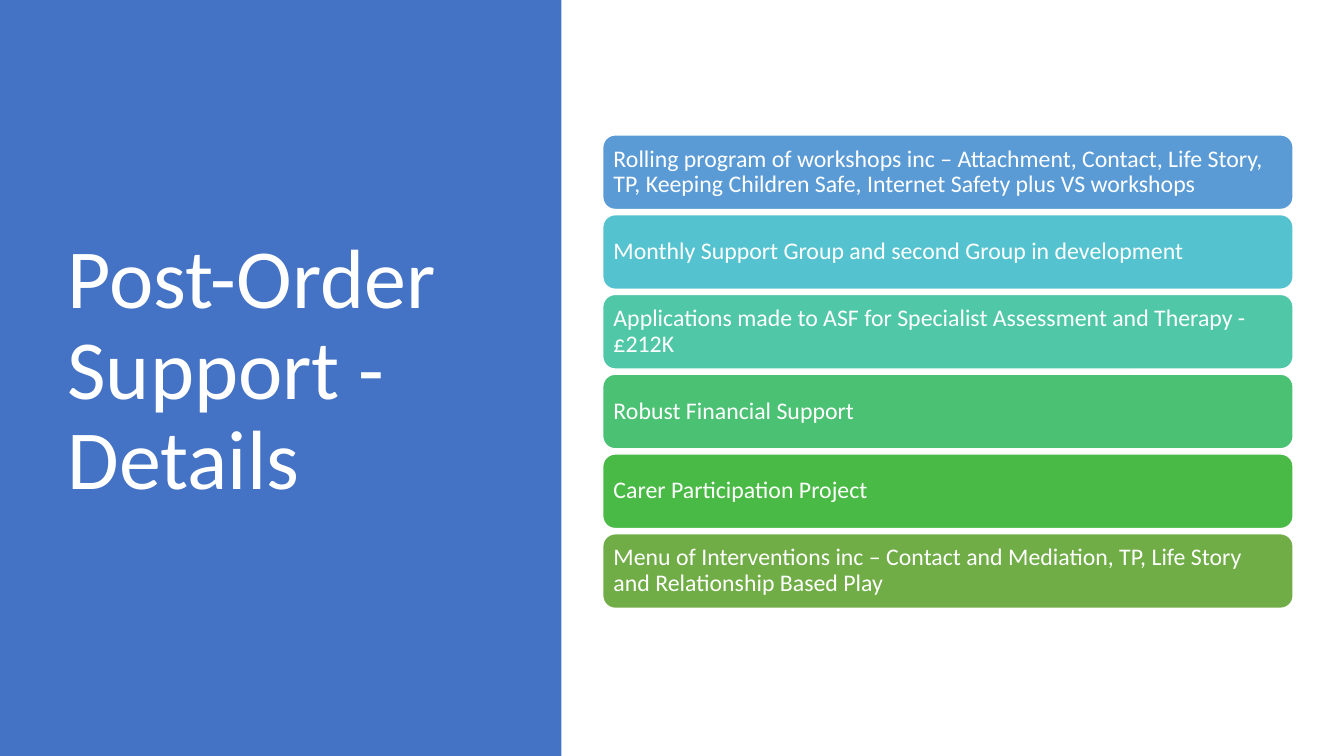
"""Build the Post-Order Support slide: a title panel beside six coloured bars."""
from pptx import Presentation
from pptx.dml.color import RGBColor
from pptx.enum.shapes import MSO_SHAPE
from pptx.enum.text import MSO_ANCHOR, PP_ALIGN
from pptx.util import Cm, Pt

COLOURS = {
    "panel": "4472C4",
    "white": "FFFFFF",
    "workshops": "5B9BD5",
    "groups": "55C3CF",
    "therapy": "50C8A7",
    "finance": "4BC174",
    "participation": "4ABA46",
    "interventions": "70AD47",
}
SUPPORT = {
    "workshops": "Rolling program of workshops inc – Attachment, Contact, Life Story, "
                 "TP, Keeping Children Safe, Internet Safety plus VS workshops",
    "groups": "Monthly Support Group and second Group in development",
    "therapy": "Applications made to ASF for Specialist Assessment and Therapy - £212K",
    "finance": "Robust Financial Support",
    "participation": "Carer Participation Project",
    "interventions": "Menu of Interventions inc – Contact and Mediation, TP, Life Story "
                     "and Relationship Based Play",
}
BAR_LEFT, BAR_TOP, BAR_WIDTH, BAR_HEIGHT = 15.19, 3.4, 17.4, 1.88
BAR_PITCH = 2.01
BAR_INSET = Cm(0.18)


def add_filled_shape(kind, left, top, width, height, colour):
    shape = slide.shapes.add_shape(kind, Cm(left), Cm(top), Cm(width), Cm(height))
    shape.shadow.inherit = False
    shape.fill.solid()
    shape.fill.fore_color.rgb = RGBColor.from_string(COLOURS[colour])
    return shape


def write_text(shape, text, size):
    frame = shape.text_frame
    frame.word_wrap = True
    frame.vertical_anchor = MSO_ANCHOR.MIDDLE
    paragraph = frame.paragraphs[0]
    paragraph.text = text
    paragraph.alignment = PP_ALIGN.LEFT
    paragraph.line_spacing = 0.9
    paragraph.font.name = "Calibri"
    paragraph.font.size = Pt(size)
    paragraph.font.color.rgb = RGBColor.from_string(COLOURS["white"])
    return frame


presentation = Presentation()
presentation.slide_width = Cm(33.87)
presentation.slide_height = Cm(19.05)
slide = presentation.slides.add_slide(presentation.slide_layouts[6])

panel = add_filled_shape(MSO_SHAPE.RECTANGLE, 0, 0, 14.15, 19.05, "panel")
panel.line.fill.background()

title = slide.shapes.add_textbox(Cm(1.45), Cm(1.73), Cm(10.57), Cm(15.29))
write_text(title, "Post-Order Support - Details", 60)

for row, (topic, text) in enumerate(SUPPORT.items()):
    bar = add_filled_shape(MSO_SHAPE.ROUNDED_RECTANGLE, BAR_LEFT, BAR_TOP + row * BAR_PITCH,
                           BAR_WIDTH, BAR_HEIGHT, topic)
    bar.line.color.rgb = RGBColor.from_string(COLOURS["white"])
    bar.line.width = Pt(1)
    frame = write_text(bar, text, 17)
    frame.margin_left = frame.margin_right = BAR_INSET
    frame.margin_top = frame.margin_bottom = BAR_INSET

presentation.save("out.pptx")
